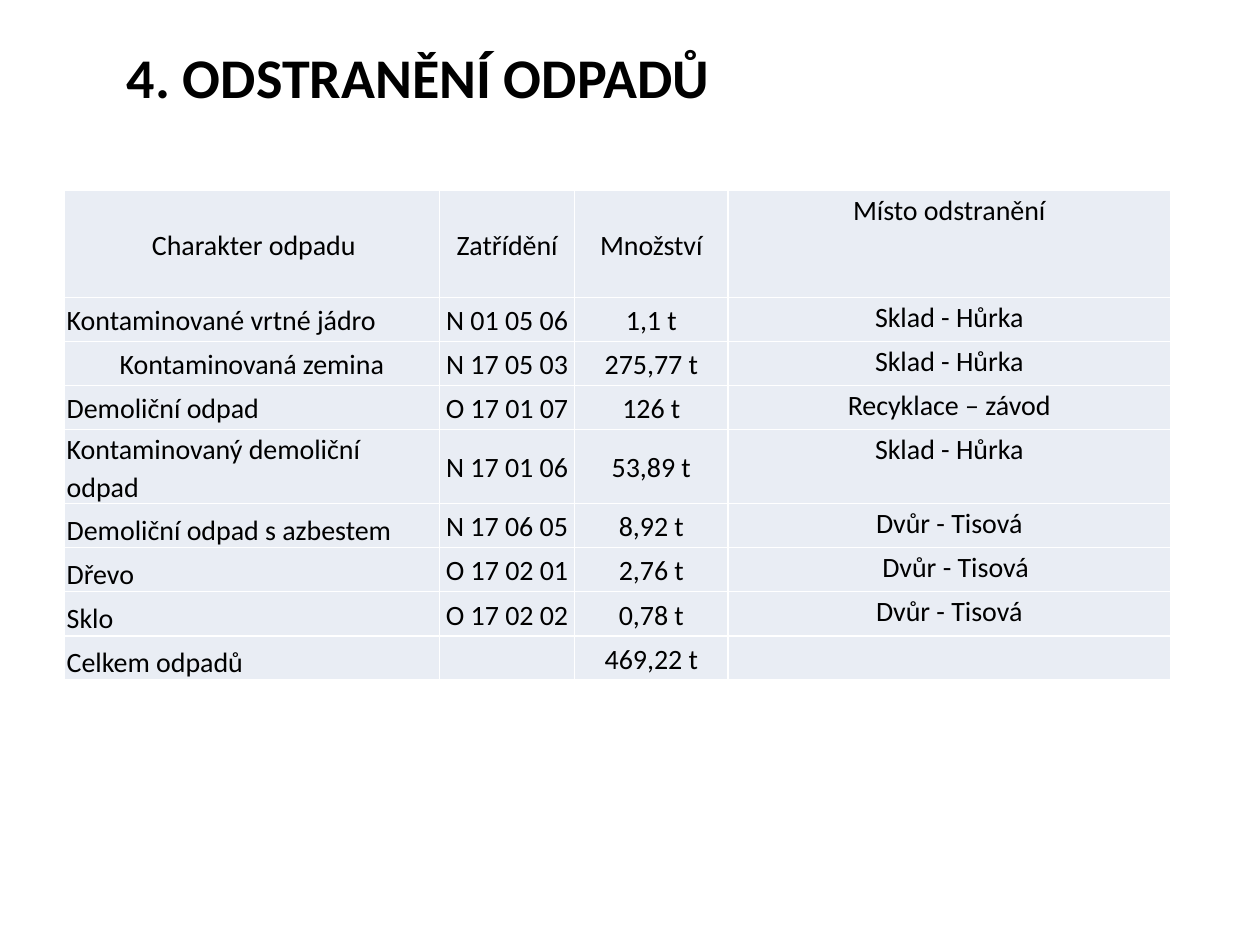
from pptx import Presentation
from pptx.dml.color import RGBColor
from pptx.enum.text import MSO_ANCHOR as Anchor, PP_ALIGN as Align
from pptx.oxml import parse_xml
from pptx.oxml.ns import nsdecls
from pptx.util import Inches, Pt

BLACK = RGBColor(0, 0, 0)
WHITE = RGBColor(255, 255, 255)
PALE = RGBColor(0xE9, 0xED, 0xF4)
FONT = "Calibri"

COLS = [2.98, 1.07, 1.22, 3.51]
HEAD_H, ROW_H = 0.85, 0.35
ROWS = [
    ["Charakter odpadu", "Zatřídění", "Množství", "Místo odstranění"],
    ["Kontaminované vrtné jádro", "N 01 05 06", "1,1 t", "Sklad - Hůrka"],
    ["Kontaminovaná zemina", "N 17 05 03", "275,77 t", "Sklad - Hůrka"],
    ["Demoliční odpad", "O 17 01 07", "126 t", "Recyklace – závod"],
    ["Kontaminovaný demoliční odpad", "N 17 01 06", "53,89 t", "Sklad - Hůrka"],
    ["Demoliční odpad s azbestem", "N 17 06 05", "8,92 t", "Dvůr - Tisová"],
    ["Dřevo", "O 17 02 01", "2,76 t", "Dvůr - Tisová"],
    ["Sklo", "O 17 02 02", "0,78 t", "Dvůr - Tisová"],
    ["Celkem odpadů", "", "469,22 t", ""],
]
# First-line indents by (row, column)
INDENTS = {(0, 0): 0.03, (2, 0): 0.42, (6, 3): 0.1}
LOW_ROW = 4  # from this row on, the first column sits at the bottom


def add_run(para, text, size, bold=False):
    run = para.add_run()
    run.text = text
    font = run.font
    font.name, font.size, font.bold = FONT, Pt(size), bold
    font.color.rgb = BLACK


def add_title(slide, box, text):
    frame = slide.shapes.add_textbox(*map(Inches, box)).text_frame
    frame.word_wrap = True
    add_run(frame.paragraphs[0], text, 32, True)


def add_edges(cell):
    props = cell._tc.get_or_add_tcPr()
    for i, side in enumerate(("lnL", "lnR", "lnT", "lnB")):
        props.insert(i, parse_xml(
            f'<a:{side} {nsdecls("a")} w="{Pt(1)}"><a:solidFill>'
            f'<a:srgbClr val="{WHITE}"/></a:solidFill></a:{side}>'))


def fill_cell(cell, row, col, text):
    cell.fill.solid()
    cell.fill.fore_color.rgb = PALE
    add_edges(cell)
    cell.margin_left = cell.margin_right = Inches(0.02)
    cell.margin_top = cell.margin_bottom = 0
    if col == 3:
        cell.vertical_anchor = Anchor.TOP
    elif col == 0 and row >= LOW_ROW:
        cell.vertical_anchor = Anchor.BOTTOM
    else:
        cell.vertical_anchor = Anchor.MIDDLE
    if not text:
        return
    para = cell.text_frame.paragraphs[0]
    para.alignment = Align.LEFT if col == 0 and row else Align.CENTER
    para.line_spacing = 1.1
    para.space_before = para.space_after = Pt(2)
    if (row, col) in INDENTS:
        props = para._p.get_or_add_pPr()
        props.set("marL", "0")
        props.set("indent", str(Inches(INDENTS[row, col])))
    add_run(para, text, 16)


def add_waste(slide, left, top):
    """Table of waste types, codes, amounts and disposal sites."""
    high = HEAD_H + ROW_H * (len(ROWS) - 1)
    box = map(Inches, (left, top, sum(COLS), high))
    table = slide.shapes.add_table(len(ROWS), len(COLS), *box).table
    table.horz_banding = False
    for col, width in zip(table.columns, COLS):
        col.width = Inches(width)
    for r, texts in enumerate(ROWS):
        table.rows[r].height = Inches(ROW_H if r else HEAD_H)
        for c, text in enumerate(texts):
            fill_cell(table.cell(r, c), r, c, text)


def main():
    deck = Presentation()
    deck.slide_width, deck.slide_height = Inches(10), Inches(7.5)
    slide = deck.slides.add_slide(deck.slide_layouts[6])
    add_title(slide, (0.91, 0.29, 8.5, 1.49), "4. ODSTRANĚNÍ ODPADŮ")
    add_waste(slide, 0.51, 1.51)
    deck.save("out.pptx")


if __name__ == "__main__":
    main()
